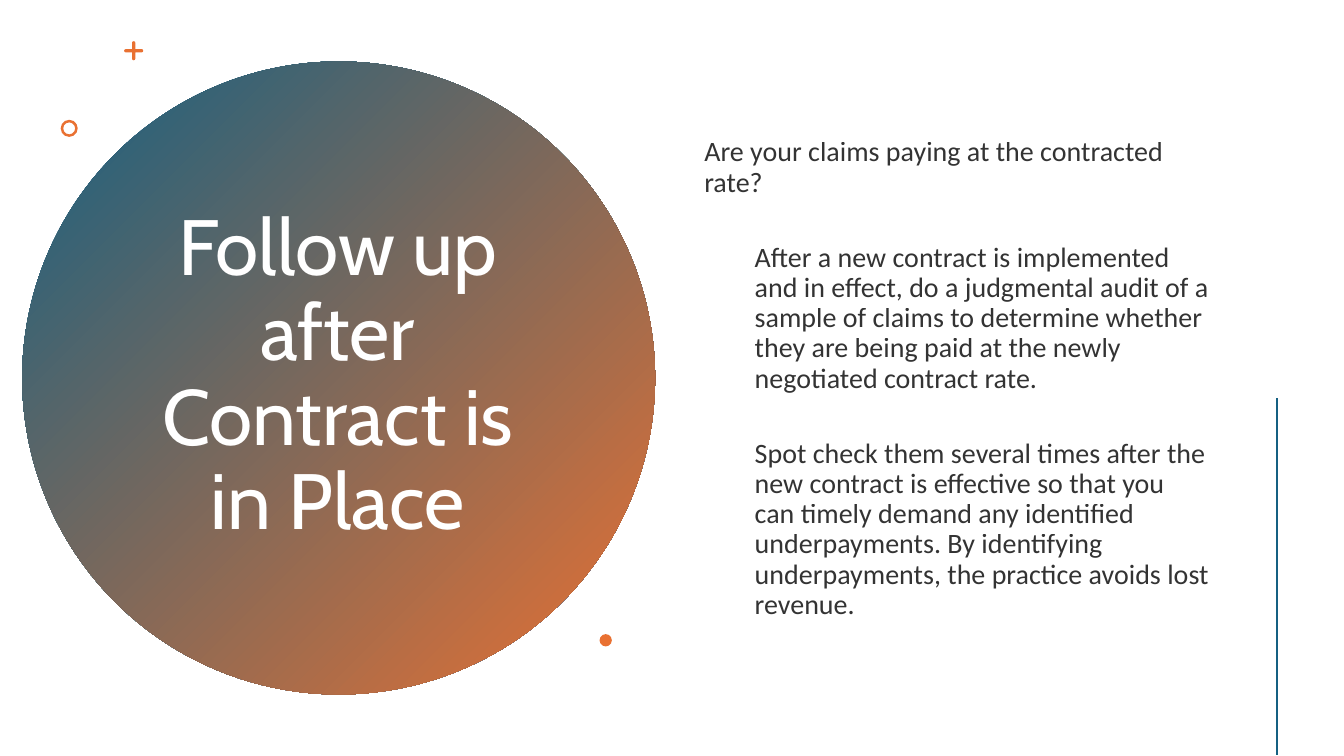
from math import cos, pi, sin

from lxml.etree import SubElement
from pptx import Presentation
from pptx.dml.color import RGBColor
from pptx.enum.shapes import MSO_CONNECTOR, MSO_SHAPE
from pptx.enum.text import MSO_ANCHOR, PP_ALIGN
from pptx.oxml.ns import qn
from pptx.util import Cm, Pt

BLUE = RGBColor(0x15, 0x60, 0x82)
ORANGE = RGBColor(0xE9, 0x71, 0x32)
WHITE = RGBColor(0xFF, 0xFF, 0xFF)
BLACK = RGBColor(0x00, 0x00, 0x00)

TITLE = "Follow up after Contract is in Place"
QUESTION = "Are your claims paying at the contracted rate?"
ADVICE = [
    "After a new contract is implemented and in effect, do a judgmental audit of a "
    "sample of claims to determine whether they are being paid at the newly "
    "negotiated contract rate.",
    "Spot check them several times after the new contract is effective so that you "
    "can timely demand any identified underpayments. By identifying underpayments, "
    "the practice avoids lost revenue.",
]


def apply(target, values):
    for name, value in values.items():
        setattr(target, name, value)


class SlideBuilder:
    title_font = {"name": "Cabin", "size": Pt(56)}
    body_font = {"name": "Calibri", "size": Pt(20)}
    frame = {"word_wrap": True, "vertical_anchor": MSO_ANCHOR.MIDDLE}

    def __init__(self, slide):
        self.s = slide

    def paint(self, sp, color):
        sp.shadow.inherit = False
        sp.fill.solid()
        sp.fill.fore_color.rgb = color
        sp.line.fill.background()

    def round_shape(self, kind, x, y, size, color=ORANGE):
        sp = self.s.shapes.add_shape(kind, Cm(x), Cm(y), Cm(size), Cm(size))
        self.paint(sp, color)
        return sp

    def gradient_disc(self, x, y, size, colors, angle):
        sp = self.round_shape(MSO_SHAPE.OVAL, x, y, size)
        sp.fill.gradient()
        sp.fill.gradient_angle = angle
        for stop, color in zip(sp.fill.gradient_stops, colors):
            stop.color.rgb = color

    def plus(self, x, y, reach, radius, steps=8):
        points = []
        for arm in range(4):
            turn = arm * pi / 2
            cap = [turn - pi / 2 + i * pi / steps for i in range(steps + 1)]
            tip = reach - radius
            points += [(x + tip * cos(turn) + radius * cos(a),
                        y + tip * sin(turn) + radius * sin(a)) for a in cap]
            corner = turn + pi / 4
            points.append((x + radius * 2 ** 0.5 * cos(corner),
                           y + radius * 2 ** 0.5 * sin(corner)))
        points = [(Cm(px), Cm(py)) for px, py in points]
        outline = self.s.shapes.build_freeform(*points[0])
        outline.add_line_segments(points[1:], close=True)
        self.paint(outline.convert_to_shape(), ORANGE)

    def text(self, x, y, w, h):
        tf = self.s.shapes.add_textbox(Cm(x), Cm(y), Cm(w), Cm(h)).text_frame
        apply(tf, self.frame)
        return tf

    def paragraph(self, p, text, font, color, layout, indent=0, alpha=None):
        apply(p, {"line_spacing": 0.9, **layout})
        if indent:
            p._p.get_or_add_pPr().set("marL", str(Cm(indent)))
        r = p.add_run()
        r.text = text
        apply(r.font, font)
        r.font.color.rgb = color
        if alpha:
            rgb = r._r.rPr.find(".//" + qn("a:srgbClr"))
            SubElement(rgb, qn("a:alpha")).set("val", str(alpha * 1000))

    def line(self, x1, y1, x2, y2, color, width):
        ln = self.s.shapes.add_connector(
            MSO_CONNECTOR.STRAIGHT, Cm(x1), Cm(y1), Cm(x2), Cm(y2))
        ln.line.color.rgb = color
        ln.line.width = Pt(width)
        SubElement(ln._element.spPr, qn("a:effectLst"))


def main():
    prs = Presentation()
    apply(prs, {"slide_width": Cm(33.87), "slide_height": Cm(19.05)})
    b = SlideBuilder(prs.slides.add_slide(prs.slide_layouts[6]))

    b.gradient_disc(0.56, 1.55, 15.95, (BLUE, ORANGE), 315)
    title = b.text(3.45, 3.58, 10.13, 11.86)
    b.paragraph(title.paragraphs[0], TITLE, b.title_font, WHITE,
                {"alignment": PP_ALIGN.CENTER})

    b.plus(3.37, 1.28, 0.24, 0.04)
    ring = b.round_shape(MSO_SHAPE.DONUT, 1.53, 3.02, 0.43)
    ring.adjustments[0] = 0.15

    body = b.text(17.5, 1.45, 13.26, 16.2)
    b.paragraph(body.paragraphs[0], QUESTION, b.body_font, BLACK,
                {"space_before": Pt(10)}, alpha=80)
    for advice in ADVICE:
        b.paragraph(body.add_paragraph(), advice, b.body_font, BLACK,
                    {"level": 1, "space_before": Pt(32)}, indent=1.27, alpha=80)

    b.round_shape(MSO_SHAPE.OVAL, 15.11, 15.98, 0.31)
    b.line(32.18, 10.03, 32.18, 19.03, BLUE, 2)

    prs.save("out.pptx")


if __name__ == "__main__":
    main()
